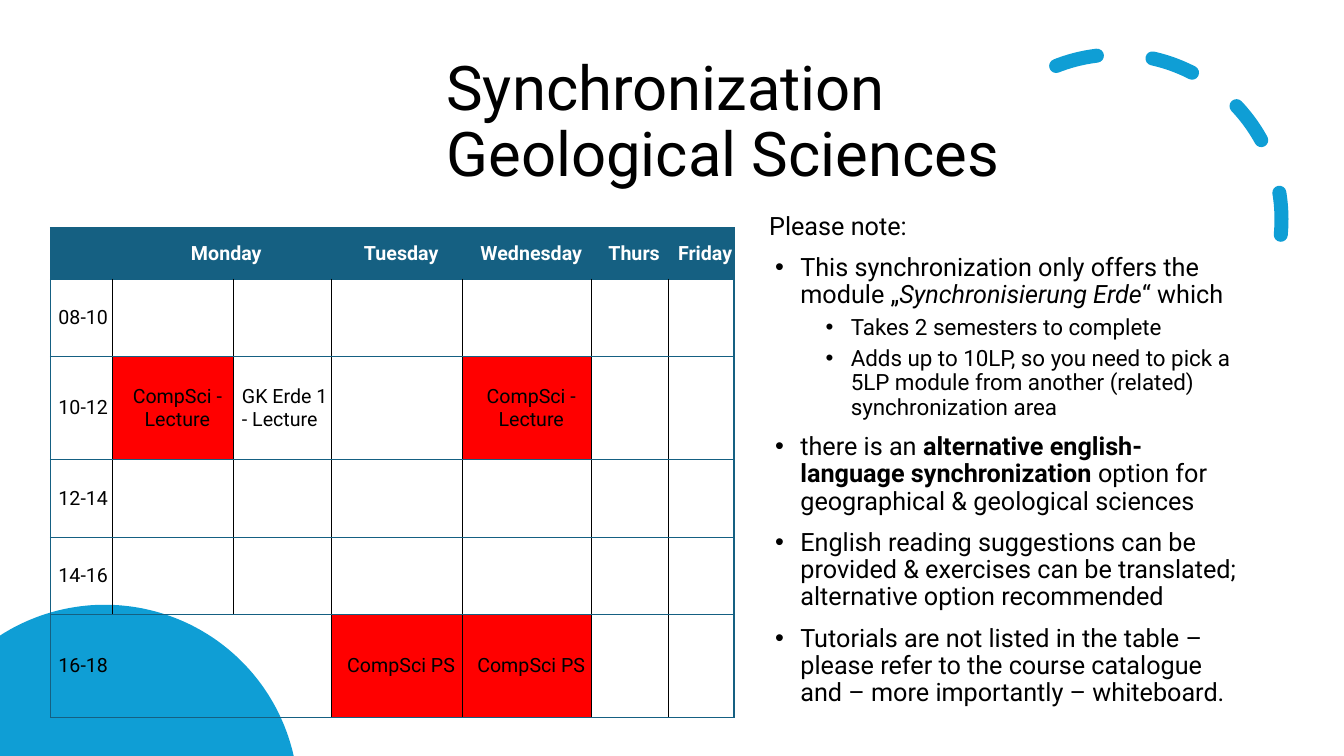
import math
import lxml.etree
import pptx
import pptx.dml.color
import pptx.enum.shapes
import pptx.enum.text
import pptx.oxml.ns
import pptx.util

HEADING = "Synchronization Geological Sciences"
DAYS = ["", "Monday", "", "Tuesday", "Wednesday", "Thurs", "Friday"]
HOURS = ["08-10", "10-12", "12-14", "14-16", "16-18"]
COURSES = {
    (2, 1): "CompSci - Lecture",
    (2, 2): "GK Erde 1 - Lecture",
    (2, 4): "CompSci - Lecture",
    (5, 3): "CompSci PS",
    (5, 4): "CompSci PS",
}
CLASHES = [(2, 1), (2, 4), (5, 3), (5, 4)]
NOTES = [
    ("lead", [("Please note:", "")]),
    ("point", [("This synchronization only offers the module „", ""),
               ("Synchronisierung Erde", "i"), ("“ which", "")]),
    ("detail", [("Takes 2 semesters to complete", "")]),
    ("detail", [("Adds up to 10LP, so you need to pick a 5LP module from another "
                 "(related) synchronization area", "")]),
    ("point", [("there is an ", ""),
               ("alternative english-language synchronization ", "b"),
               ("option for geographical & geological sciences", "")]),
    ("point", [("English reading suggestions can be provided & exercises can be "
                "translated; alternative option recommended", "")]),
    ("point", [("Tutorials are not listed in the table – please refer to the course "
                "catalogue and – more importantly – whiteboard.", "")]),
]
NOTE_STYLES = {"lead": (18, 10, 0), "point": (18, 10, 0.31), "detail": (16, 5, 0.81)}
HANGING = 0.25

FONT = "Roboto"
BLACK = pptx.dml.color.RGBColor(0, 0, 0)
WHITE = pptx.dml.color.RGBColor(255, 255, 255)
RED = pptx.dml.color.RGBColor(255, 0, 0)
TEAL = pptx.dml.color.RGBColor(0x15, 0x60, 0x82)
SKY = pptx.dml.color.RGBColor(0x0F, 0x9E, 0xD5)

COLUMNS = [0.62, 1.2, 0.97, 1.3, 1.28, 0.76, 0.65]
SHORT, TALL = 0.77, 1.02
ROWS = [0.51, SHORT, TALL, SHORT, SHORT, TALL]
TABLE_LEFT, TABLE_TOP = 0.5, 2.26
WIDTH, HEIGHT = 13.33, 7.5
DISC_X, DISC_Y, DISC_RADIUS = 1.04, 7.92, 1.92

inch = pptx.util.Inches
qn = pptx.oxml.ns.qn


def add_run(paragraph, text, size, color=BLACK, bold=False, italic=False):
    run = paragraph.add_run()
    run.text = text
    run.font.name, run.font.size = FONT, pptx.util.Pt(size)
    run.font.bold, run.font.italic = bold, italic
    run.font.color.rgb = color


def add_text_frame(slide, left, top, width, height):
    frame = slide.shapes.add_textbox(*map(inch, (left, top, width, height))).text_frame
    frame.word_wrap = True
    return frame


def add_arc(slide):
    arc = slide.shapes.add_shape(pptx.enum.shapes.MSO_SHAPE.ARC,
                                 inch(9.44), inch(0.54), inch(3.27), inch(3.27))
    arc.adjustments[0], arc.adjustments[1] = 144.42, 0
    arc.rotation = 66.1
    arc._element.spPr.find(qn("a:xfrm")).set("flipH", "1")
    arc.shadow.inherit = False
    arc.fill.background()
    arc.line.color.rgb = SKY
    arc.line.width = pptx.util.Pt(10)
    arc.line.dash_style = pptx.enum.dml.MSO_LINE.DASH
    arc.line._ln.set("cap", "rnd")


def add_disc(slide):
    start = math.atan2(-math.sqrt(DISC_RADIUS ** 2 - DISC_X ** 2), -DISC_X)
    end = -math.asin((DISC_Y - HEIGHT) / DISC_RADIUS)
    steps = 90
    angles = [start + (end - start) * step / steps for step in range(steps + 1)]
    rim = [(DISC_X + DISC_RADIUS * math.cos(angle), DISC_Y + DISC_RADIUS * math.sin(angle))
           for angle in angles]
    outline = slide.shapes.build_freeform(0, inch(HEIGHT))
    outline.add_line_segments([(inch(x), inch(y)) for x, y in rim], close=True)
    disc = outline.convert_to_shape()
    disc.shadow.inherit = False
    disc.fill.solid()
    disc.fill.fore_color.rgb = SKY
    disc.line.fill.background()


def add_notes(slide):
    frame = add_text_frame(slide, 7.53, 2.07, 4.88, 5.24)
    for index, (kind, pieces) in enumerate(NOTES):
        size, before, indent = NOTE_STYLES[kind]
        paragraph = frame.paragraphs[0] if index == 0 else frame.add_paragraph()
        paragraph.line_spacing = 0.9
        paragraph.space_before = pptx.util.Pt(before if index else 0)
        if indent:
            paragraph.level = int(kind == "detail")
            properties = paragraph._p.get_or_add_pPr()
            properties.set("marL", str(inch(indent)))
            properties.set("indent", str(-inch(HANGING)))
            lxml.etree.SubElement(properties, qn("a:buFont")).set("typeface", "Arial")
            lxml.etree.SubElement(properties, qn("a:buChar")).set("char", "•")
        for text, style in pieces:
            add_run(paragraph, text, size, bold=style == "b", italic=style == "i")


def add_border(cell, side, color):
    line = lxml.etree.SubElement(cell._tc.get_or_add_tcPr(), qn("a:ln" + side), w="12700")
    if color is None:
        lxml.etree.SubElement(line, qn("a:noFill"))
    else:
        fill = lxml.etree.SubElement(line, qn("a:solidFill"))
        lxml.etree.SubElement(fill, qn("a:srgbClr")).set("val", str(color))


def edge_color(row, edge):
    if row == 0 or edge in (0, len(COLUMNS)):
        return TEAL
    if row == len(HOURS) and edge < 3:
        return None
    return BLACK


def add_timetable(slide):
    table = slide.shapes.add_table(len(ROWS), len(COLUMNS), inch(TABLE_LEFT), inch(TABLE_TOP),
                                   inch(sum(COLUMNS)), inch(sum(ROWS))).table
    table.first_row = table.horz_banding = False
    for column, width in zip(table.columns, COLUMNS):
        column.width = inch(width)
    for row, height in zip(table.rows, ROWS):
        row.height = inch(height)
    table.cell(0, 1).merge(table.cell(0, 2))
    for row in range(len(ROWS)):
        for column in range(len(COLUMNS)):
            cell, place = table.cell(row, column), (row, column)
            cell.vertical_anchor = pptx.enum.text.MSO_ANCHOR.MIDDLE
            cell.margin_left, cell.margin_right = inch(0.08), 0
            cell.margin_top = cell.margin_bottom = inch(0.06)
            add_border(cell, "L", edge_color(row, column))
            add_border(cell, "R", edge_color(row, column + 1))
            add_border(cell, "T", TEAL)
            add_border(cell, "B", TEAL)
            if row == 0 or place in CLASHES:
                cell.fill.solid()
                cell.fill.fore_color.rgb = RED if row else TEAL
            else:
                cell.fill.background()
            if row == 0:
                text = DAYS[column]
            else:
                text = HOURS[row - 1] if column == 0 else COURSES.get(place, "")
            if text:
                paragraph = cell.text_frame.paragraphs[0]
                if row == 0 or place in CLASHES:
                    paragraph.alignment = pptx.enum.text.PP_ALIGN.CENTER
                add_run(paragraph, text, 14, BLACK if row else WHITE, bold=row == 0)


def main():
    deck = pptx.Presentation()
    deck.slide_width, deck.slide_height = inch(WIDTH), inch(HEIGHT)
    slide = deck.slides.add_slide(deck.slide_layouts[6])
    add_arc(slide)
    heading = add_text_frame(slide, 4.33, 0.5, 5.97, 1.45)
    heading.vertical_anchor = pptx.enum.text.MSO_ANCHOR.MIDDLE
    heading.paragraphs[0].line_spacing = 0.9
    add_run(heading.paragraphs[0], HEADING, 44)
    add_disc(slide)
    add_notes(slide)
    add_timetable(slide)
    deck.save("out.pptx")


if __name__ == "__main__":
    main()
